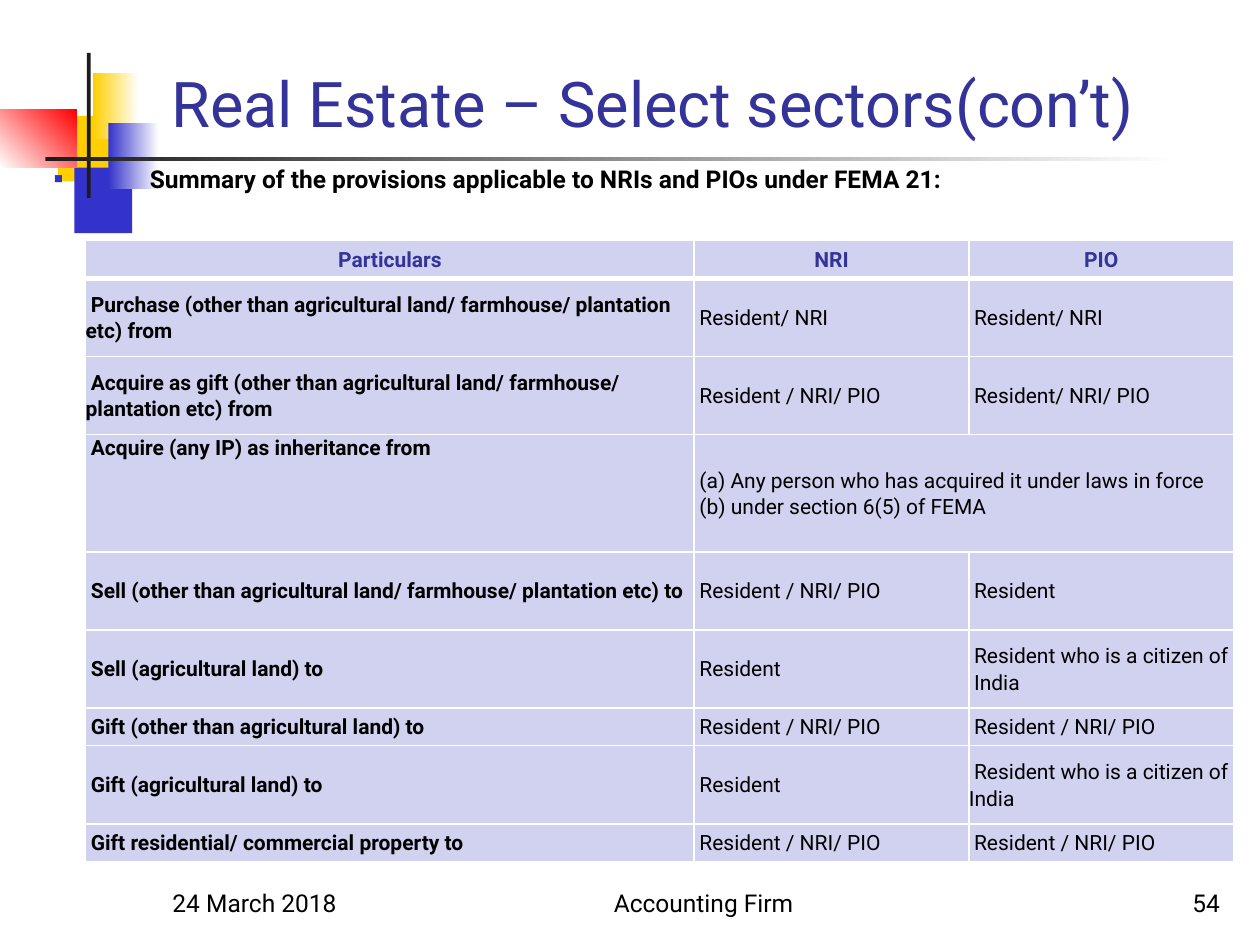
from dataclasses import dataclass
from typing import NamedTuple, Optional

from lxml.etree import SubElement
from pptx import Presentation
from pptx.dml.color import RGBColor as Rgb
from pptx.enum.shapes import MSO_SHAPE as Preset
from pptx.enum.text import MSO_ANCHOR as Anchor, MSO_AUTO_SIZE as AutoSize, PP_ALIGN as Align
from pptx.oxml.ns import qn
from pptx.util import Inches, Pt

GRID_COLUMNS, GRID_ROWS = 1000, 750
SLIDE_WIDTH, SLIDE_HEIGHT = Inches(10), Inches(7.5)


@dataclass(frozen=True)
class Theme:
    font: str = "Roboto"
    heading: str = "333399"
    text: str = "000000"
    white: str = "FFFFFF"
    blue: str = "3333CC"
    yellow: str = "FFCF01"
    red: str = "FF0000"
    dark: str = "1C1C1C"
    cell: str = "D1D1F0"
    title_size: float = 36
    body_size: float = 14
    table_size: float = 12
    line_spacing: float = 1.07
    rule: float = 1
    header_rule: float = 3


THEME = Theme()


class Area(NamedTuple):
    column: int
    row: int
    columns: int
    rows: int

    def lengths(self):
        return (across(self.column), down(self.row), across(self.columns), down(self.rows))


class Ornament(NamedTuple):
    area: Area
    start: str
    end: Optional[str] = None
    angle: float = 0


class FooterItem(NamedTuple):
    area: Area
    text: str
    align: Align


class Provision(NamedTuple):
    particulars: str
    nri: str
    pio: Optional[str] = None
    anchor: Anchor = Anchor.MIDDLE


def across(columns: float) -> int:
    return round(SLIDE_WIDTH * columns / GRID_COLUMNS)


def down(rows: float) -> int:
    return round(SLIDE_HEIGHT * rows / GRID_ROWS)


ORNAMENTS = [
    Ornament(Area(46, 92, 48, 52), THEME.yellow),
    Ornament(Area(59, 133, 46, 52), THEME.blue),
    Ornament(Area(74, 58, 36, 52), THEME.yellow, THEME.white),
    Ornament(Area(86, 98, 40, 52), THEME.blue, THEME.white),
    Ornament(Area(0, 87, 61, 46), THEME.white, THEME.red, 45),
    Ornament(Area(69, 42, 3, 115), THEME.dark),
    Ornament(Area(36, 125, 900, 3), THEME.dark, THEME.white),
]

FOOTER = [
    FooterItem(Area(127, 683, 208, 50), "24 March 2018", Align.LEFT),
    FooterItem(Area(400, 683, 317, 50), "Accounting Firm", Align.CENTER),
    FooterItem(Area(770, 683, 208, 50), "54", Align.RIGHT),
]

ANYONE = " Resident / NRI/ PIO"
PROVISIONS = [
    Provision("Particulars", "NRI", "PIO"),
    Provision(" Purchase (other than agricultural land/ farmhouse/ plantation etc) from",
              " Resident/ NRI", " Resident/ NRI"),
    Provision(" Acquire as gift (other than agricultural land/ farmhouse/ plantation etc) from",
              ANYONE, " Resident/ NRI/ PIO"),
    Provision(" Acquire (any IP) as inheritance from",
              " (a) Any person who has acquired it under laws in force"
              "\v (b) under section 6(5) of FEMA", anchor=Anchor.TOP),
    Provision(" Sell (other than agricultural land/ farmhouse/ plantation etc) to",
              ANYONE, " Resident"),
    Provision(" Sell (agricultural land) to", " Resident",
              " Resident who is a citizen of\v India"),
    Provision(" Gift (other than agricultural land) to", ANYONE, ANYONE),
    Provision(" Gift (agricultural land) to", " Resident",
              " Resident who is a citizen of India"),
    Provision(" Gift residential/ commercial property to", ANYONE, ANYONE),
]
TABLE_AREA = Area(68, 191, 911, 492)
TABLE_COLUMNS = [483, 218, 210]
SHORT, MEDIUM, TALL = 30, 62, 93
TABLE_ROWS = [SHORT, MEDIUM, MEDIUM, TALL, MEDIUM, MEDIUM, SHORT, MEDIUM, SHORT]


def write(frame, text: str, *, size: float, color: str = THEME.text, bold: bool = False,
          align: Align = Align.LEFT, spacing: Optional[float] = None):
    frame.word_wrap = True
    paragraph = frame.paragraphs[0]
    paragraph.text = text
    paragraph.alignment = align
    if spacing:
        paragraph.line_spacing = spacing
    for run in paragraph.runs:
        run.font.name = THEME.font
        run.font.size = Pt(size)
        run.font.bold = bold
        run.font.color.rgb = Rgb.from_string(color)
    return paragraph


def draw_ornament(slide, ornament: Ornament) -> None:
    block = slide.shapes.add_shape(Preset.RECTANGLE, *ornament.area.lengths())
    block.shadow.inherit = False
    block.line.fill.background()
    if ornament.end is None:
        block.fill.solid()
        block.fill.fore_color.rgb = Rgb.from_string(ornament.start)
        return
    block.fill.gradient()
    block.fill.gradient_angle = ornament.angle
    for stop, color in zip(block.fill.gradient_stops, (ornament.start, ornament.end)):
        stop.color.rgb = Rgb.from_string(color)


def place(holder, area: Area) -> None:
    holder.left, holder.top, holder.width, holder.height = area.lengths()
    holder.text_frame.auto_size = AutoSize.NONE
    holder.element.getparent().append(holder.element)


def add_bullet(paragraph, indent: int) -> None:
    paragraph.space_before = Pt(THEME.body_size * 0.2)
    properties = paragraph._p.get_or_add_pPr()
    properties.set("marL", str(indent))
    properties.set("indent", str(-indent))
    SubElement(SubElement(properties, qn("a:buClr")), qn("a:srgbClr"), val=THEME.blue)
    SubElement(properties, qn("a:buSzPct"), val="60000")
    SubElement(properties, qn("a:buChar"), char="■")


def format_cell(cell, row: int) -> None:
    properties = cell._tc.get_or_add_tcPr()
    widths = {"lnL": THEME.rule, "lnR": THEME.rule,
              "lnT": THEME.header_rule if row == 1 else THEME.rule,
              "lnB": THEME.header_rule if row == 0 else THEME.rule}
    for side, width in widths.items():
        border = SubElement(properties, qn(f"a:{side}"), w=str(Pt(width)))
        SubElement(SubElement(border, qn("a:solidFill")), qn("a:srgbClr"), val=THEME.white)
    cell.fill.solid()
    cell.fill.fore_color.rgb = Rgb.from_string(THEME.cell)
    cell.margin_left = cell.margin_right = cell.margin_top = cell.margin_bottom = 0


def draw_provisions(slide) -> None:
    table = slide.shapes.add_table(
        len(TABLE_ROWS), len(TABLE_COLUMNS), *TABLE_AREA.lengths()).table
    for column, width in zip(table.columns, TABLE_COLUMNS):
        column.width = across(width)
    for row, (height, provision) in enumerate(zip(TABLE_ROWS, PROVISIONS)):
        table.rows[row].height = down(height)
        header = row == 0
        for column, text in enumerate((provision.particulars, provision.nri, provision.pio)):
            cell = table.cell(row, column)
            format_cell(cell, row)
            cell.vertical_anchor = provision.anchor if column == 0 else Anchor.MIDDLE
            if text is None:
                table.cell(row, column - 1).merge(cell)
                continue
            write(cell.text_frame, text, size=THEME.table_size, bold=header or column == 0,
                  color=THEME.heading if header else THEME.text,
                  align=Align.CENTER if header else Align.LEFT, spacing=THEME.line_spacing)


def main() -> None:
    deck = Presentation()
    deck.slide_width, deck.slide_height = SLIDE_WIDTH, SLIDE_HEIGHT
    slide = deck.slides.add_slide(deck.slide_layouts[1])
    for ornament in ORNAMENTS:
        draw_ornament(slide, ornament)

    title, summary = slide.shapes.title, slide.placeholders[1]
    place(title, Area(126, 23, 852, 93))
    title.text_frame.vertical_anchor = Anchor.BOTTOM
    write(title.text_frame, "Real Estate – Select sectors(con’t)",
          size=THEME.title_size, color=THEME.heading)
    place(summary, Area(33, 125, 946, 575))
    provisions_line = write(
        summary.text_frame,
        "Summary of the provisions applicable to NRIs and PIOs under FEMA 21:",
        size=THEME.body_size, bold=True)
    add_bullet(provisions_line, across(76))

    for item in FOOTER:
        note = slide.shapes.add_textbox(*item.area.lengths()).text_frame
        note.vertical_anchor = Anchor.BOTTOM
        write(note, item.text, size=THEME.body_size, align=item.align)
    draw_provisions(slide)
    deck.save("out.pptx")


if __name__ == "__main__":
    main()
